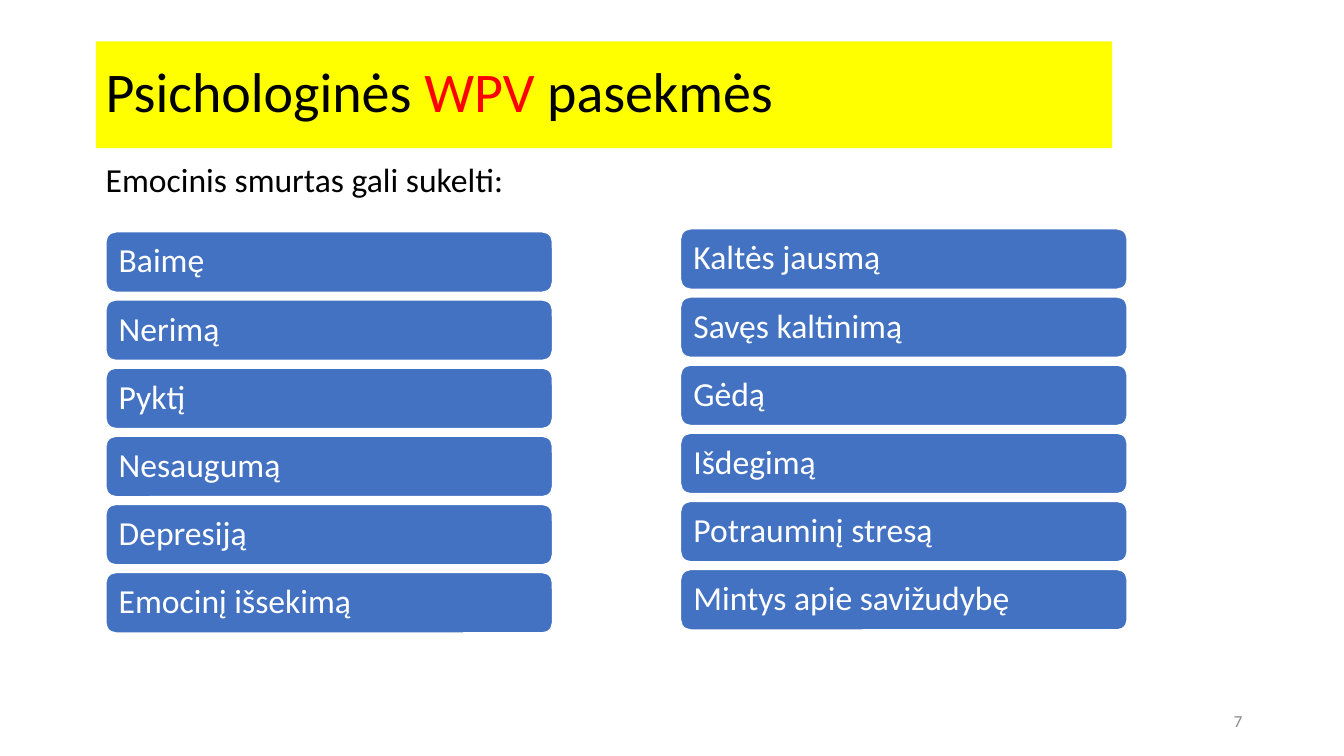
from pptx import Presentation
from pptx.dml.color import RGBColor
from pptx.enum.shapes import MSO_SHAPE
from pptx.enum.text import MSO_ANCHOR, PP_ALIGN
from pptx.util import Inches, Pt

COLORS = {
    "yellow": "FFFF00",
    "red": "FF0000",
    "blue": "4372C3",
    "black": "000000",
    "white": "FFFFFF",
    "gray": "888888",
}
FONT = "Calibri"
LEFT_EFFECTS = ["Baimę", "Nerimą", "Pyktį", "Nesaugumą", "Depresiją", "Emocinį išsekimą"]
RIGHT_EFFECTS = [
    "Kaltės jausmą",
    "Savęs kaltinimą",
    "Gėdą",
    "Išdegimą",
    "Potrauminį stresą",
    "Mintys apie savižudybę",
]
BAR_WIDTH = 4.43
BAR_HEIGHT = 0.6
COLUMN_DROP = 3.38


def color(name):
    return RGBColor.from_string(COLORS[name])


def write(shape, spans, size, align=PP_ALIGN.LEFT, spacing=1.0, inset=0.1):
    frame = shape.text_frame
    frame.word_wrap = True
    frame.vertical_anchor = MSO_ANCHOR.MIDDLE
    frame.margin_left = frame.margin_right = Inches(inset)
    para = frame.paragraphs[0]
    para.alignment = align
    para.line_spacing = spacing
    for text, color_name in spans:
        span = para.add_run()
        span.text = text
        span.font.name = FONT
        span.font.size = Pt(size)
        span.font.color.rgb = color(color_name)


def add_panel(page, kind, left, top, width, height, fill):
    panel = page.shapes.add_shape(
        kind, Inches(left), Inches(top), Inches(width), Inches(height)
    )
    panel.shadow.inherit = False
    panel.fill.solid()
    panel.fill.fore_color.rgb = color(fill)
    panel.line.fill.background()
    return panel


def add_label(page, left, top, width, height, text, size, color_name, align=PP_ALIGN.LEFT):
    box = page.shapes.add_textbox(
        Inches(left), Inches(top), Inches(width), Inches(height)
    )
    write(box, [(text, color_name)], size, align)


def add_title(page):
    title = add_panel(page, MSO_SHAPE.RECTANGLE, 0.95, 0.41, 10.08, 1.06, "yellow")
    spans = [("Psichologinės ", "black"), ("WPV", "red"), (" pasekmės", "black")]
    write(title, spans, 40, spacing=0.9)


def add_effect_column(page, left, top, effects):
    pitch = COLUMN_DROP / (len(effects) - 1)
    for row, effect in enumerate(effects):
        bar = add_panel(
            page, MSO_SHAPE.ROUNDED_RECTANGLE,
            left, top + row * pitch, BAR_WIDTH, BAR_HEIGHT, "blue",
        )
        bar.line.color.rgb = color("white")
        bar.line.width = Pt(1)
        write(bar, [(effect, "white")], 24, spacing=0.9, inset=0.1)


def main():
    deck = Presentation()
    deck.slide_width = Inches(13.33)
    deck.slide_height = Inches(7.5)
    page = deck.slides.add_slide(deck.slide_layouts[6])
    add_title(page)
    add_label(page, 0.95, 1.53, 9.96, 0.5, "Emocinis smurtas gali sukelti:", 24, "black")
    add_effect_column(page, 1.05, 2.3, LEFT_EFFECTS)
    add_effect_column(page, 6.75, 2.27, RIGHT_EFFECTS)
    add_label(page, 9.42, 6.95, 3, 0.4, "7", 12, "gray", PP_ALIGN.RIGHT)
    deck.save("out.pptx")


if __name__ == "__main__":
    main()
